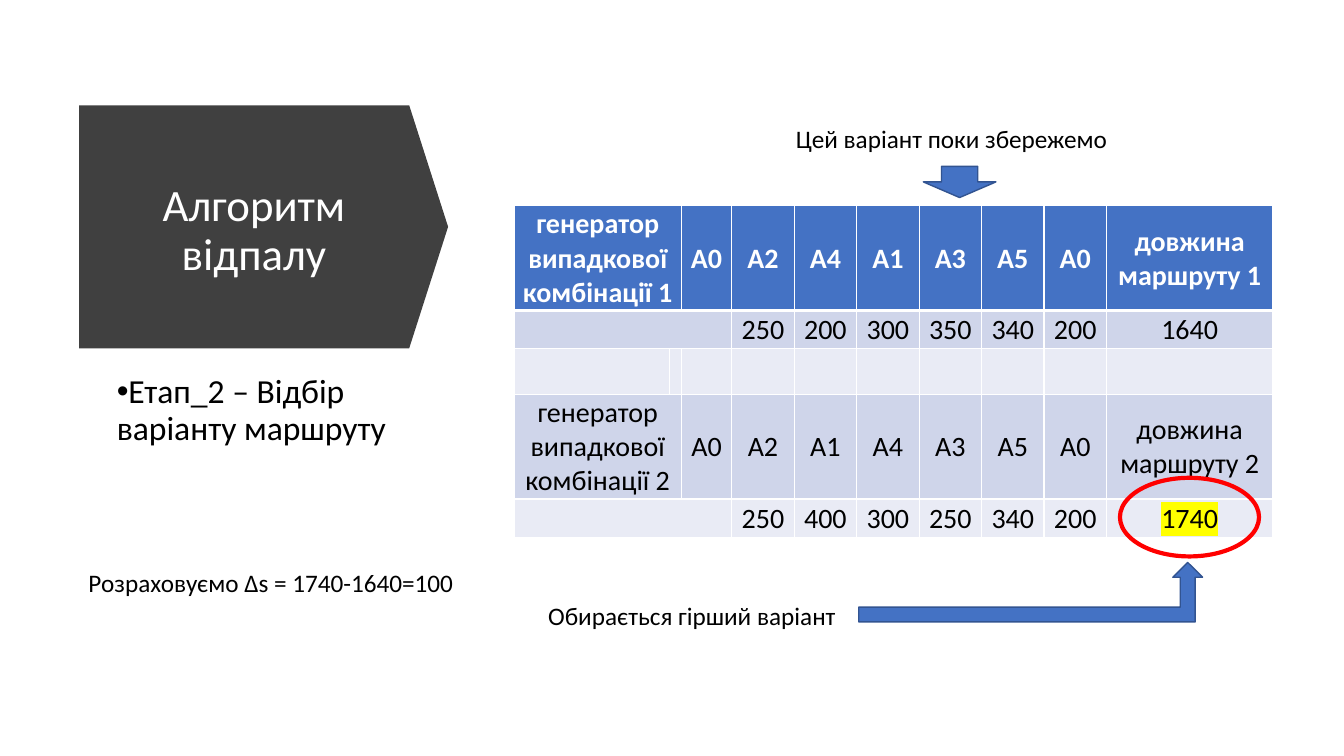
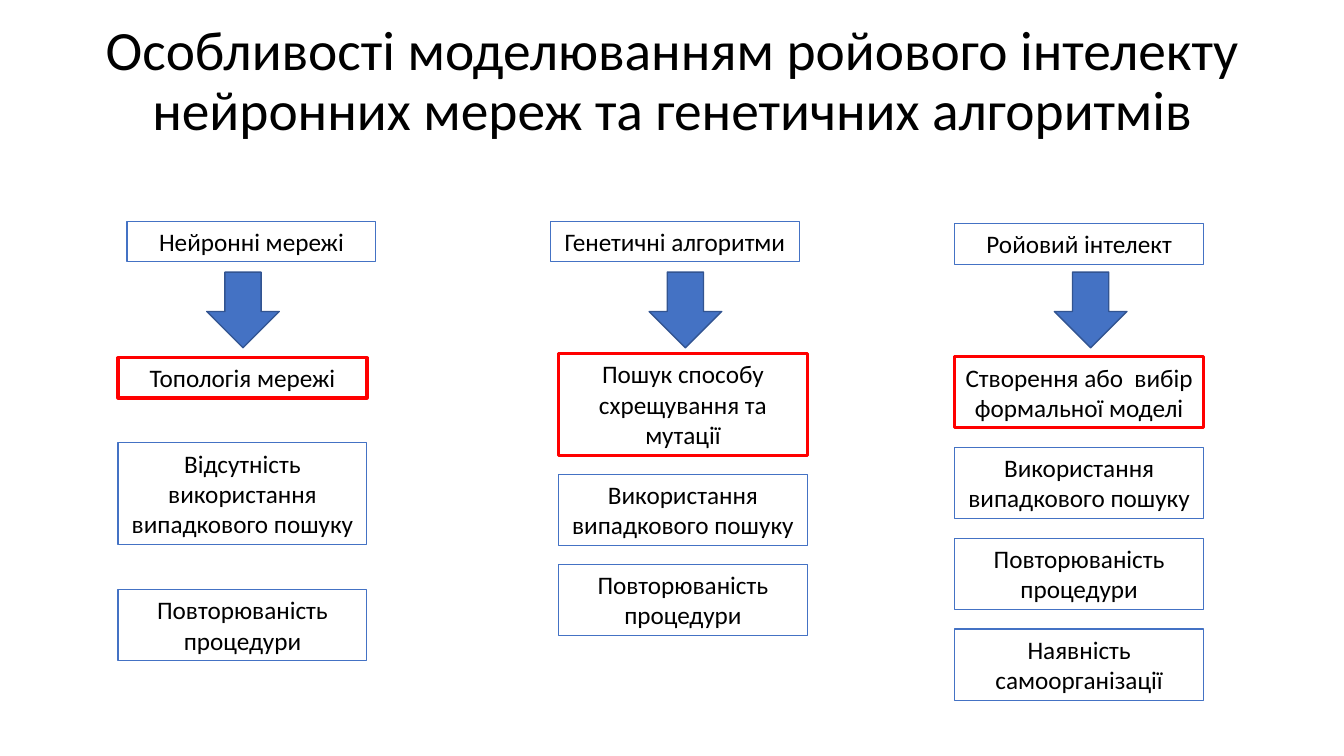
from lxml import etree
from pptx import Presentation
from pptx.dml.color import RGBColor
from pptx.enum.shapes import MSO_SHAPE
from pptx.enum.text import MSO_ANCHOR, MSO_AUTO_SIZE, PP_ALIGN
from pptx.oxml.ns import qn
from pptx.util import Inches, Pt

WIDE, HIGH = Inches(13.333), Inches(7.5)
FONT = "Calibri"

BLACK = RGBColor(0x00, 0x00, 0x00)
WHITE = RGBColor(0xFF, 0xFF, 0xFF)
GREY = RGBColor(0x40, 0x40, 0x40)
BLUE = RGBColor(0x44, 0x72, 0xC4)
NAVY = RGBColor(0x32, 0x54, 0x91)
RED = RGBColor(0xFF, 0x00, 0x00)
YELLOW = RGBColor(0xFF, 0xFF, 0x00)
DARK = RGBColor(0xCF, 0xD5, 0xEA)
LIGHT = RGBColor(0xE9, 0xEB, 0xF5)

LEFT, CENTER = PP_ALIGN.LEFT, PP_ALIGN.CENTER
TOP, MIDDLE = MSO_ANCHOR.TOP, MSO_ANCHOR.MIDDLE
GROW = MSO_AUTO_SIZE.SHAPE_TO_FIT_TEXT
RECT, OVAL = MSO_SHAPE.RECTANGLE, MSO_SHAPE.OVAL
DOWN, BENT = MSO_SHAPE.DOWN_ARROW, MSO_SHAPE.BENT_UP_ARROW

LINE = 4.07
BOX_W, BOX_H = 18.53, 5.33
ARROW_W = 5.4

COLS = [11.55, 0.9, 3.75] + [4.65] * 6 + [12.38]
ROWS = [13.87, 5.07, 6, 13.87, 5.07]
FILLS = [BLUE, DARK, LIGHT, DARK, LIGHT]
SPANS = [2, 3, 1, 2, 3]
ROUTES = [
    ["генератор випадкової комбінації 1", "A0", "A2", "A4", "A1", "A3",
     "A5", "A0", "довжина маршруту 1"],
    ["", "250", "200", "300", "350", "340", "200", "1640"],
    [""] * 10,
    ["генератор випадкової комбінації 2", "A0", "A2", "A1", "A4", "A3",
     "A5", "A0", "довжина маршруту 2"],
    ["", "250", "400", "300", "250", "340", "200", "1740"],
]

SEARCH = ("Використання випадкового пошуку", 2)
REPEAT = ("Повторюваність процедури", 2)
METHODS = [
    dict(head="Нейронні мережі", spot=(9.45, 29.33), arrow=15.38,
         left=8.78, top=47.33, gap=5.93,
         steps=[("Топологія мережі", 1),
                ("Відсутність використання випадкового пошуку", 3), REPEAT]),
    dict(head="Генетичні алгоритми", spot=(40.95, 29.33), arrow=48.3,
         left=41.55, top=46.8, gap=2.5,
         steps=[("Пошук способу схрещування та мутації", 3), SEARCH, REPEAT]),
    dict(head="Ройовий інтелект", spot=(71.03, 29.6), arrow=78.45,
         left=71.03, top=47.2, gap=2.6,
         steps=[("Створення або  вибір формальної моделі", 2), SEARCH, REPEAT,
                ("Наявність самоорганізації", 2)]),
]


def across(share):
    return round(WIDE * share / 100)


def down(share):
    return round(HIGH * share / 100)


def place(left, top, width, height):
    return across(left), down(top), across(width), down(height)


def write(frame, text, size=18, color=BLACK, align=LEFT, bold=False,
          space=None, after=None, mark=None):
    para = frame.paragraphs[0]
    para.alignment = align
    if space:
        para.line_spacing = space
    if after:
        para.space_after = Pt(after)
    run = para.add_run()
    run.text = text
    font = run.font
    font.name, font.size, font.bold = FONT, Pt(size), bold
    font.color.rgb = color
    if mark:
        glow = etree.Element(qn("a:highlight"))
        etree.SubElement(glow, qn("a:srgbClr"), val=str(mark))
        run._r.rPr.find(qn("a:solidFill")).addnext(glow)
    return para


def label(slide, spot, text, anchor=TOP, grow=True, **style):
    frame = slide.shapes.add_textbox(*place(*spot)).text_frame
    frame.word_wrap = True
    frame.vertical_anchor = anchor
    if grow:
        frame.auto_size = GROW
    return write(frame, text, **style)


def draw(slide, kind, spot, fill=None, line=None, weight=1):
    shape = slide.shapes.add_shape(kind, *place(*spot))
    shape.shadow.inherit = False
    if fill is None:
        shape.fill.background()
    else:
        shape.fill.solid()
        shape.fill.fore_color.rgb = fill
    if line is None:
        shape.line.fill.background()
    else:
        shape.line.color.rgb = line
        shape.line.width = Pt(weight)
    return shape


def box(slide, left, top, text, lines=1, line=BLUE, weight=0.75):
    height = BOX_H + (lines - 1) * LINE
    shape = draw(slide, RECT, (left, top, BOX_W, height),
                 line=line, weight=weight)
    frame = shape.text_frame
    frame.word_wrap = True
    frame.vertical_anchor = TOP
    frame.auto_size = GROW
    write(frame, text, align=CENTER)
    return top + height


def bullet(para):
    props = para._p.get_or_add_pPr()
    props.set("marL", "0")
    props.set("indent", str(-Inches(0.25)))
    etree.SubElement(props, qn("a:buFont"), typeface="Arial")
    etree.SubElement(props, qn("a:buChar"), char="•")


def edge(cell, base):
    props = cell._tc.get_or_add_tcPr()
    for side in "LRTB":
        width = base if side == "B" else 1
        line = etree.SubElement(props, qn("a:ln" + side), w=str(Pt(width)))
        fill = etree.SubElement(line, qn("a:solidFill"))
        etree.SubElement(fill, qn("a:srgbClr"), val=str(WHITE))


def paint(cell, fill, base):
    cell.margin_left = cell.margin_right = cell.margin_top = Inches(0.01)
    cell.margin_bottom = 0
    cell.vertical_anchor = MIDDLE
    edge(cell, base)
    cell.fill.solid()
    cell.fill.fore_color.rgb = fill


def grid(slide, left, top):
    spot = place(left, top, sum(COLS), sum(ROWS))
    table = slide.shapes.add_table(len(ROWS), len(COLS), *spot).table
    for col, width in zip(table.columns, COLS):
        col.width = across(width)
    for row, height in zip(table.rows, ROWS):
        row.height = down(height)
    for r, (texts, fill, span) in enumerate(zip(ROUTES, FILLS, SPANS)):
        first = r == 0
        for c in range(len(COLS)):
            paint(table.cell(r, c), fill, 3 if first else 1)
        if span > 1:
            table.cell(r, 0).merge(table.cell(r, span - 1))
        spots = [0, *range(span, len(COLS))]
        for c, text in zip(spots, texts):
            if text:
                write(table.cell(r, c).text_frame, text, size=20,
                      color=WHITE if first else BLACK, bold=first,
                      align=CENTER, mark=YELLOW if text == "1740" else None)


def anneal(slide):
    banner = draw(slide, DOWN, (10.58, 5.6, 18.08, 48.8), fill=GREY)
    banner.rotation = 270
    banner.adjustments[0] = 1
    banner.adjustments[1] = 0.16
    label(slide, (7.95, 17.6, 21.9, 26), "Алгоритм відпалу", anchor=MIDDLE,
          grow=False, size=32, color=WHITE, align=CENTER, space=0.9, after=6)
    bullet(label(slide, (7.95, 48.93, 21.9, 35.33),
                 "Етап_2 – Відбір варіанту маршруту", grow=False,
                 size=24, space=0.9, after=6))
    grid(slide, 38.25, 27.2)
    draw(slide, OVAL, (83.33, 63.2, 10.35, 10.4), line=RED, weight=3)
    label(slide, (40.05, 78.8, 24.68, BOX_H), "Обирається гірший варіант")
    draw(slide, BENT, (63.9, 74.4, 25.58, 7.87), fill=BLUE, line=NAVY)
    label(slide, (5.85, 74.4, 30.23, BOX_H), "Розраховуємо Δs = 1740-1640=100")
    label(slide, (54.45, 15.6, 32.7, BOX_H), "Цей варіант поки збережемо",
          align=CENTER)
    draw(slide, DOWN, (68.7, 22, ARROW_W, 4.13), fill=BLUE, line=NAVY)


def chain(slide, head, spot, arrow, left, top, gap, steps):
    box(slide, *spot, head)
    draw(slide, DOWN, (arrow, 36, ARROW_W, 10), fill=BLUE, line=NAVY)
    for i, (text, lines) in enumerate(steps):
        look = {} if i else dict(line=RED, weight=2.25)
        top = box(slide, left, top, text, lines, **look) + gap


def compare(slide):
    label(slide, (6.9, 1.2, 86.25, 19.33),
          "Особливості моделюванням ройового інтелекту "
          "нейронних мереж та генетичних алгоритмів",
          anchor=MIDDLE, grow=False, size=39.6, align=CENTER, space=0.9)
    for method in METHODS:
        chain(slide, **method)


def main():
    deck = Presentation()
    deck.slide_width, deck.slide_height = WIDE, HIGH
    blank = deck.slide_layouts[6]
    for build in (anneal, compare):
        build(deck.slides.add_slide(blank))
    deck.save("out.pptx")


if __name__ == "__main__":
    main()
